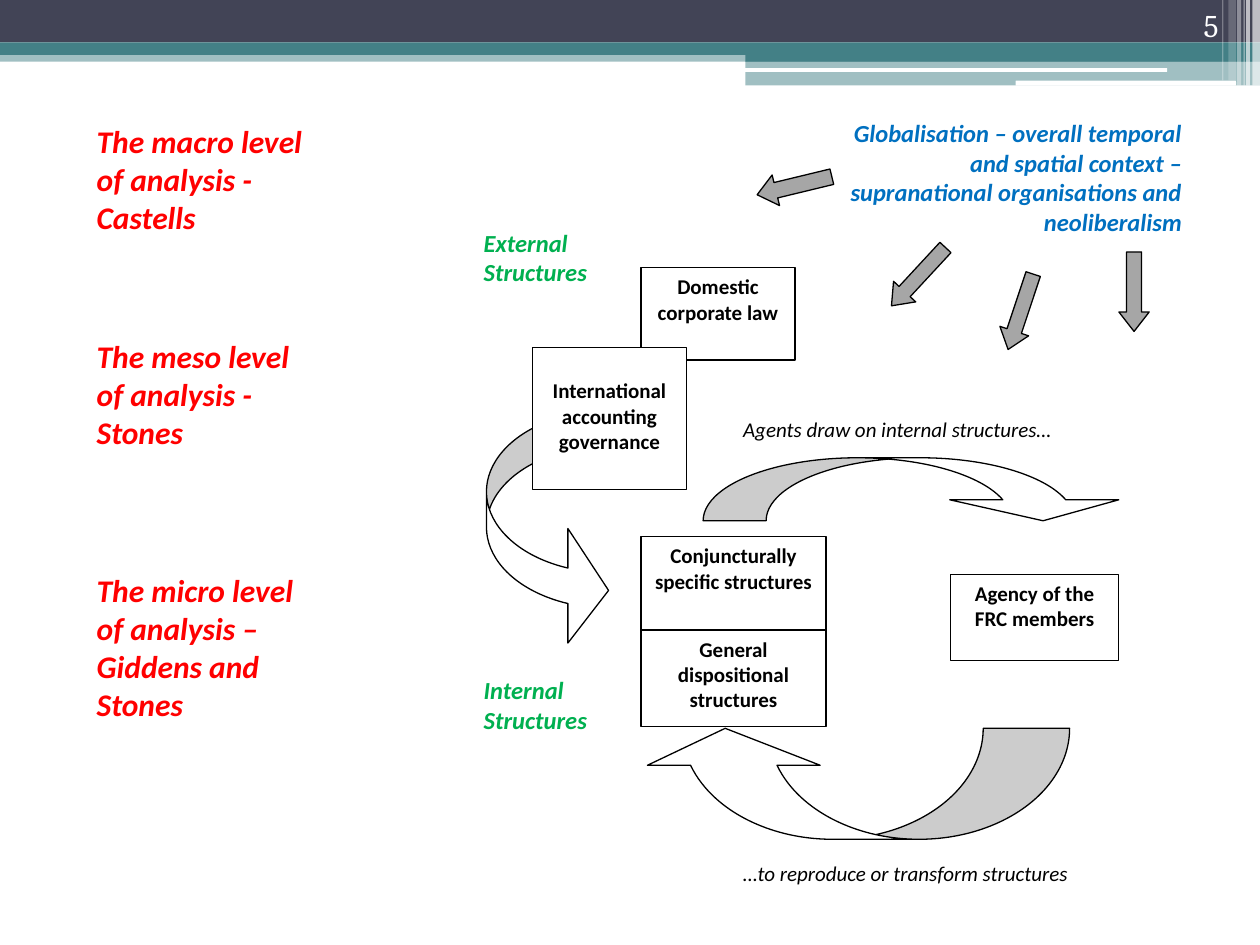
from dataclasses import dataclass

from lxml import etree
from pptx import Presentation
from pptx.dml.color import RGBColor
from pptx.enum.shapes import MSO_SHAPE
from pptx.enum.text import MSO_ANCHOR, PP_ALIGN
from pptx.oxml.ns import qn
from pptx.util import Pt

RECTANGLE = MSO_SHAPE.RECTANGLE
ROUNDED = MSO_SHAPE.ROUNDED_RECTANGLE
DOWN_ARROW = MSO_SHAPE.DOWN_ARROW
CURVED_DOWN = MSO_SHAPE.CURVED_DOWN_ARROW
CURVED_RIGHT = MSO_SHAPE.CURVED_RIGHT_ARROW
LEFT, CENTER, RIGHT = PP_ALIGN.LEFT, PP_ALIGN.CENTER, PP_ALIGN.RIGHT
TOP, BOTTOM = MSO_ANCHOR.TOP, MSO_ANCHOR.BOTTOM

BLACK, WHITE, GREY = "000000", "FFFFFF", "A6A6A6"
NAVY, TEAL = "424456", "438086"
RED, GREEN, BLUE = "FF0000", "00B050", "0070C0"

LEVEL = {"name": "Calibri", "size": Pt(18), "bold": True, "italic": True}
CONTEXT = {"name": "Calibri", "size": Pt(14), "bold": True, "italic": True}
CONCEPT = {"name": "Calibri", "size": Pt(12), "bold": True, "italic": False}
CAPTION = {"name": "Calibri", "size": Pt(12), "bold": False, "italic": True}
NUMBER = {"name": "Cambria", "size": Pt(18), "bold": False, "italic": False}


@dataclass
class Bar:
    left: float
    top: float
    width: float
    height: float
    color: str
    opacity: int = 100
    kind: int = RECTANGLE


@dataclass
class Arrow:
    left: float
    top: float
    width: float
    height: float
    kind: int = DOWN_ARROW
    rotation: float = 0
    adjustments: tuple[float, ...] = (0.5, 0.64)
    color: str = GREY


@dataclass
class Label:
    text: str
    left: float
    top: float
    width: float
    height: float
    font: dict
    color: str = BLACK
    align: int = LEFT
    anchor: int = TOP
    framed: bool = False
    filled: bool = True
    inset_top: float = 3.6


BARS = [
    Bar(0, 28.8, 720, 6.5, TEAL, 50),
    Bar(0, 0, 720, 24.2, NAVY),
    Bar(0, 24.2, 720, 7.2, TEAL),
    Bar(426, 28.1, 294, 7.2, TEAL),
    Bar(426, 34.8, 294, 14, TEAL, 50),
    Bar(425.5, 38.9, 241.5, 2.2, WHITE, kind=ROUNDED),
    Bar(580.3, 46.1, 126, 2.9, WHITE, kind=ROUNDED),
    Bar(715.7, 0, 4.3, 49, WHITE, 65),
    Bar(712.1, 0, 2.2, 49, WHITE, 65),
    Bar(710.6, 0, 0.7, 49, WHITE, 60),
    Bar(707, 0, 2.2, 49, WHITE, 40),
    Bar(702, 0, 4.3, 46, WHITE, 20),
    Bar(698.4, 0, 0.7, 46, WHITE, 30),
]

DIAGRAM = [
    Arrow(365, 416.2, 246.2, 63.4, CURVED_DOWN, 180, (0.779, 1.557, 0.333), WHITE),
    Label("External Structures", 269.3, 126.7, 114.5, 74.9, CONTEXT, GREEN),
    Label("Globalisation – overall temporal and spatial context – "
          "supranational organisations and neoliberalism",
          478.8, 64.1, 203.8, 79.9, CONTEXT, BLUE, RIGHT),
    Label("Internal Structures", 269.3, 382.3, 95, 85.7, CONTEXT, GREEN),
    Arrow(445, 84.2, 18, 43.9, rotation=76.4, adjustments=(0.5, 0.61)),
    Label("Agency of the FRC members", 543.2, 328.3, 96, 49, CONCEPT,
          align=CENTER, framed=True),
    Label("Conjuncturally specific structures", 366.3, 306.7, 105.8, 53.3, CONCEPT,
          align=CENTER, framed=True),
    Label("General dispositional structures", 366.3, 360, 105.8, 55.2, CONCEPT,
          align=CENTER, framed=True),
    Arrow(401.8, 261.6, 242.6, 36, CURVED_DOWN, 0, (1.342, 2.684, 0.333), WHITE),
    Arrow(516.2, 135.4, 17.3, 45.4, rotation=42.8),
    Arrow(574.6, 155.5, 17.3, 45.4, rotation=18.4),
    Arrow(639.4, 144, 17.3, 45.4),
    Label("Domestic corporate law", 366.3, 153, 88, 52.8, CONCEPT,
          align=CENTER, framed=True),
    Arrow(278, 234.7, 69.8, 135.4, CURVED_RIGHT, 0, (0.29, 0.938, 0.333), WHITE),
    Label("International accounting governance", 304.3, 198.6, 88, 81.2, CONCEPT,
          align=CENTER, framed=True, inset_top=17.4),
    Label("Agents draw on internal structures…", 417.6, 234.7, 201.6, 23, CAPTION),
    Label("…to reproduce or transform structures", 417.6, 488.2, 201.6, 23, CAPTION),
    Label("The macro level of analysis - Castells", 48.2, 66.2, 136, 72.7,
          LEVEL, RED, filled=False),
    Label("The meso level of analysis - Stones", 48.2, 189, 136, 72.7,
          LEVEL, RED, filled=False),
    Label("The micro level of analysis – Giddens and Stones", 48.2, 322.9, 136, 94.3,
          LEVEL, RED, filled=False),
    Label("5", 643.7, 0, 59.8, 28.8, NUMBER, WHITE, RIGHT, BOTTOM, filled=False),
]


def paint(target, color: str) -> None:
    target.solid()
    target.fore_color.rgb = RGBColor.from_string(color)


def outline(shape) -> None:
    paint(shape.line.fill, BLACK)
    shape.line.width = Pt(0.75)


def add_figure(page, kind: int, item, color: str):
    shape = page.shapes.add_shape(
        kind, Pt(item.left), Pt(item.top), Pt(item.width), Pt(item.height))
    shape.shadow.inherit = False
    paint(shape.fill, color)
    shape.line.fill.background()
    return shape


def draw_bar(page, bar: Bar) -> None:
    shape = add_figure(page, bar.kind, bar, bar.color)
    if bar.opacity < 100:
        tint = shape.fill._xPr.find(qn("a:solidFill"))[0]
        etree.SubElement(tint, qn("a:alpha")).set("val", str(bar.opacity * 1000))


def draw_arrow(page, arrow: Arrow) -> None:
    shape = add_figure(page, arrow.kind, arrow, arrow.color)
    outline(shape)
    shape.rotation = arrow.rotation
    for index, value in enumerate(arrow.adjustments):
        shape.adjustments[index] = value


def draw_label(page, label: Label) -> None:
    if label.filled:
        box = add_figure(page, RECTANGLE, label, WHITE)
    else:
        box = page.shapes.add_textbox(
            Pt(label.left), Pt(label.top), Pt(label.width), Pt(label.height))
    if label.framed:
        outline(box)
    frame = box.text_frame
    layout = {"word_wrap": True, "vertical_anchor": label.anchor,
              "margin_top": Pt(label.inset_top)}
    for name, value in layout.items():
        setattr(frame, name, value)
    para = frame.paragraphs[0]
    para.alignment = label.align
    span = para.add_run()
    span.text = label.text
    for name, value in label.font.items():
        setattr(span.font, name, value)
    paint(span.font.fill, label.color)


def main() -> None:
    deck = Presentation()
    deck.slide_width, deck.slide_height = Pt(720), Pt(540)
    page = deck.slides.add_slide(deck.slide_layouts[6])
    for bar in BARS:
        draw_bar(page, bar)
    for item in DIAGRAM:
        if isinstance(item, Arrow):
            draw_arrow(page, item)
        else:
            draw_label(page, item)
    deck.save("out.pptx")


if __name__ == "__main__":
    main()
